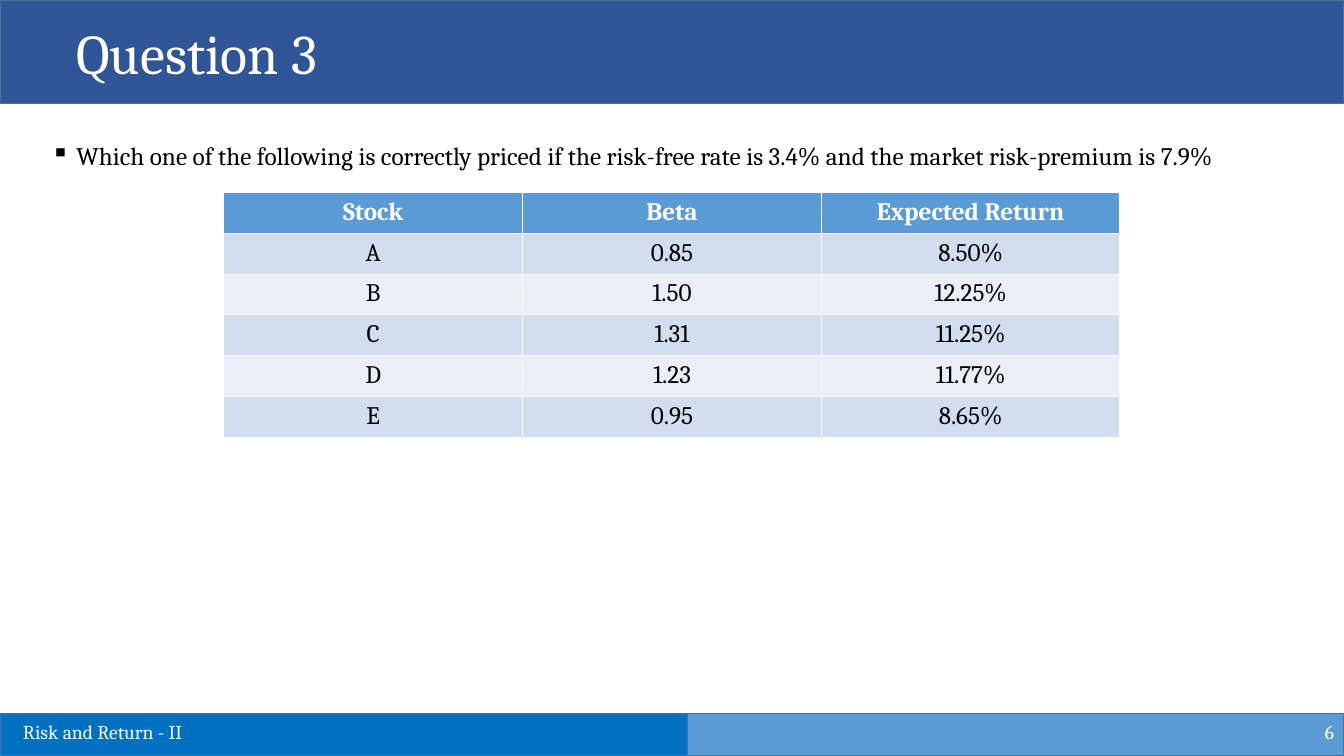
"""Build the "Question 3" slide on stock pricing."""
import pptx
import pptx.dml.color
import pptx.enum.shapes
import pptx.enum.text
import pptx.oxml
import pptx.oxml.ns
import pptx.util

Inches, Pt = pptx.util.Inches, pptx.util.Pt
ALIGN = pptx.enum.text.PP_ALIGN
ANCHOR = pptx.enum.text.MSO_ANCHOR
FONT = "Cambria"
WIDTH, HEIGHT = 13.33, 7.5
COLORS = {
    "title": "2F5597", "footer": "0070C0", "accent": "5B9BD5", "line": "43739E",
    "odd": "D2DEEF", "even": "EAEFF7", "white": "FFFFFF", "black": "000000",
}
STOCKS = [
    ("Stock", "Beta", "Expected Return"),
    ("A", "0.85", "8.50%"),
    ("B", "1.50", "12.25%"),
    ("C", "1.31", "11.25%"),
    ("D", "1.23", "11.77%"),
    ("E", "0.95", "8.65%"),
]


def rgb(name):
    """Return the named colour."""
    return pptx.dml.color.RGBColor.from_string(COLORS[name])


def write(tf, text, size, color, align=ALIGN.LEFT, bold=False):
    """Put one formatted paragraph in a text frame and return it."""
    tf.text = text
    p = tf.paragraphs[0]
    p.alignment = align
    font = p.runs[0].font
    font.name, font.size, font.bold = FONT, Pt(size), bold
    font.color.rgb = rgb(color)
    return p


def add_bar(slide, x, y, w, h, color):
    """Draw a filled, outlined rectangle."""
    sp = slide.shapes.add_shape(
        pptx.enum.shapes.MSO_SHAPE.RECTANGLE, Inches(x), Inches(y), Inches(w), Inches(h))
    sp.shadow.inherit = False
    sp.fill.solid()
    sp.fill.fore_color.rgb = rgb(color)
    sp.line.color.rgb = rgb("line")
    sp.line.width = Pt(1)


def add_text(slide, x, y, w, h, text, size, color="white", align=ALIGN.LEFT, anchor=ANCHOR.TOP):
    """Add a wrapping text box and return its paragraph."""
    tf = slide.shapes.add_textbox(Inches(x), Inches(y), Inches(w), Inches(h)).text_frame
    tf.word_wrap = True
    tf.vertical_anchor = anchor
    return write(tf, text, size, color, align)


def add_header(slide, x, y, w, h, title):
    """Add the title bar."""
    add_bar(slide, x, y, w, h, "title")
    add_text(slide, x + 0.66, y + 0.13, w - 1.25, h - 0.26, title, 40)


def add_question(slide, x, y, w, h, text):
    """Add the bulleted question."""
    p = add_text(slide, x, y, w, h, text, 18, "black", ALIGN.JUSTIFY)
    p.space_after = Pt(2)
    pPr = p._p.get_or_add_pPr()
    pPr.set("marL", str(Inches(0.25)))
    pPr.set("indent", str(-Inches(0.25)))
    bullet = pptx.oxml.parse_xml(
        '<a:buChar %s char="▪"/>' % pptx.oxml.ns.nsdecls("a"))
    pPr.append(bullet)


def add_stock_table(slide, x, y, w, h, rows):
    """Add the centred table with a header row and alternating fills."""
    table = slide.shapes.add_table(
        len(rows), len(rows[0]), Inches(x), Inches(y), Inches(w), Inches(h)).table
    for i, row in enumerate(rows):
        header = i == 0
        fill = "accent" if header else "odd" if i % 2 else "even"
        for j, text in enumerate(row):
            cell = table.cell(i, j)
            cell.fill.solid()
            cell.fill.fore_color.rgb = rgb(fill)
            write(cell.text_frame, text, 18, "white" if header else "black",
                  ALIGN.CENTER, header)


def add_footer(slide, x, y, w, h, topic, number):
    """Add the two-part footer with topic and page number."""
    split = 6.82
    add_bar(slide, x, y, split, h, "footer")
    add_bar(slide, x + split, y, w - split, h, "accent")
    add_text(slide, x + w - 3, y - 0.02, 3, 0.4, number, 14,
             align=ALIGN.RIGHT, anchor=ANCHOR.MIDDLE)
    add_text(slide, x + 0.13, y + 0.01, 5.54, 0.34, topic, 14)


def main():
    """Build and save the presentation."""
    prs = pptx.Presentation()
    prs.slide_width, prs.slide_height = Inches(WIDTH), Inches(HEIGHT)
    slide = prs.slides.add_slide(prs.slide_layouts[6])
    add_header(slide, 0, 0, WIDTH, 1.03, "Question 3")
    add_question(slide, 0.41, 1.34, 12.59, 5.7,
                 "Which one of the following is correctly priced if the risk-free rate "
                 "is 3.4% and the market risk-premium is 7.9%")
    add_footer(slide, 0, 7.08, WIDTH, 0.42, "Risk and Return - II", "6")
    add_stock_table(slide, 2.22, 1.91, 8.89, 2.43, STOCKS)
    prs.save("out.pptx")


if __name__ == "__main__":
    main()
